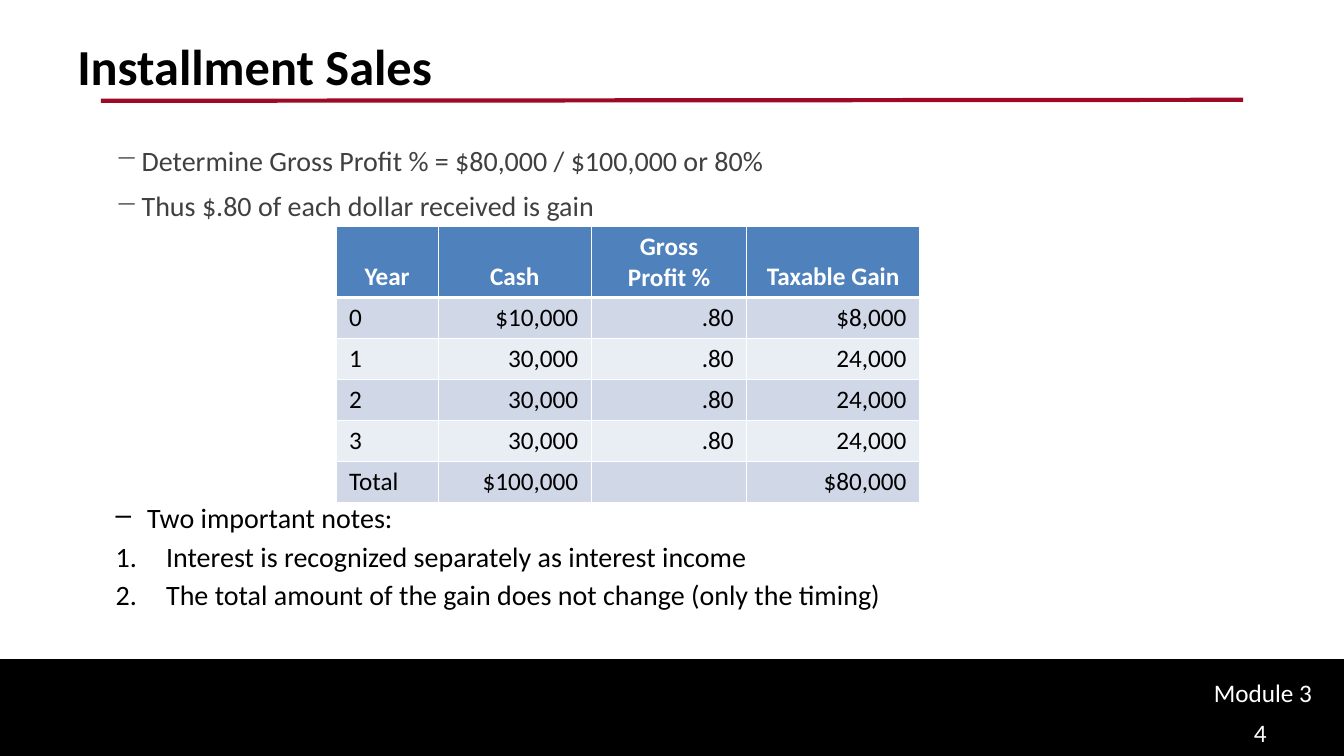
from lxml.etree import SubElement
from pptx import Presentation
from pptx.dml.color import RGBColor
from pptx.enum.shapes import MSO_CONNECTOR, MSO_SHAPE
from pptx.enum.text import MSO_ANCHOR, PP_ALIGN
from pptx.oxml.ns import qn
from pptx.util import Pt

WIDE, HIGH = 960, 540
FONT = "Calibri"
HEAD = ["Year", "Cash", "Gross\nProfit %", "Taxable Gain"]
ROWS = [
    ["0", "$10,000", ".80", "$8,000"],
    ["1", "30,000", ".80", "24,000"],
    ["2", "30,000", ".80", "24,000"],
    ["3", "30,000", ".80", "24,000"],
    ["Total", "$100,000", "", "$80,000"],
]
COLS = [73, 109.5, 111, 123.5]
STEPS = [
    "Determine Gross Profit % = $80,000 / $100,000 or 80%",
    "Thus $.80 of each dollar received is gain",
]
NOTES = [
    "Interest is recognized separately as interest income",
    "The total amount of the gain does not change (only the timing)",
]


def paint(part, hue):
    """Give a fill, line or font a solid colour."""
    if hasattr(part, "solid"):
        part.solid()
        part.fore_color.rgb = RGBColor.from_string(hue)
    else:
        part.color.rgb = RGBColor.from_string(hue)


def style(para, size, hue, bold=False):
    """Set the font of a paragraph."""
    para.font.name, para.font.size, para.font.bold = FONT, Pt(size), bold
    paint(para.font, hue)


def mark(para, left, hang, sign=None):
    """Give a paragraph a bullet sign, or a number when there is none."""
    props = para._p.get_or_add_pPr()
    props.set("marL", str(Pt(left)))
    props.set("indent", str(Pt(-hang)))
    if sign:
        SubElement(props, qn("a:buChar"), char=sign)
    else:
        SubElement(props, qn("a:buAutoNum"), type="arabicPeriod")


def label(slide, text, left, top, width, height):
    """Add a text box and return its frame."""
    box = slide.shapes.add_textbox(Pt(left), Pt(top), Pt(width), Pt(height))
    frame = box.text_frame
    frame.word_wrap = True
    frame.text = text
    return frame


def header(slide, left, top, width, height):
    """Place the title and the rule below it."""
    title = slide.shapes.title
    title.left, title.top = Pt(left), Pt(top)
    title.width, title.height = Pt(width), Pt(height)
    frame = title.text_frame
    frame.text = "Installment Sales"
    frame.vertical_anchor = MSO_ANCHOR.TOP
    para = frame.paragraphs[0]
    para.alignment = PP_ALIGN.LEFT
    style(para, 36, "000000", True)
    rule = slide.shapes.add_connector(
        MSO_CONNECTOR.STRAIGHT, Pt(left + 24), Pt(top + 50.4),
        Pt(left + width - 24), Pt(top + 49.7))
    paint(rule.line, "9E0926")
    rule.line.width = Pt(3)
    SubElement(rule._element.spPr, qn("a:effectLst"))


def steps(slide, left, top, width, height):
    """Place the dashed steps above the table."""
    frame = label(slide, "\n".join(STEPS), left, top, width, height)
    for i, para in enumerate(frame.paragraphs):
        para.line_spacing = 1.1
        para.space_before = Pt(6 if i else 0)
        mark(para, 54.5, 18.5, "−")
        style(para, 20, "404040")


def notes(slide, left, top, width, height):
    """Place the numbered notes below the table."""
    text = "\n".join(["Two important notes:"] + NOTES)
    frame = label(slide, text, left, top, width, height)
    for i, para in enumerate(frame.paragraphs):
        para.space_before = Pt(3.5 if i else 0)
        if i:
            mark(para, 72, 36)
        else:
            mark(para, 58.5, 22.5, "–")
        style(para, 20, "000000")


def border(cell, row):
    """Draw white cell edges, thick below the header."""
    props = cell._tc.get_or_add_tcPr()
    for side in "LRTB":
        thick = (row, side) in ((0, "B"), (1, "T"))
        edge = SubElement(props, qn("a:ln" + side), w=str(Pt(3 if thick else 1)))
        fill = SubElement(edge, qn("a:solidFill"))
        SubElement(fill, qn("a:srgbClr"), val="FFFFFF")


def gains(slide, left, top, height):
    """Place the table of taxable gain by year."""
    data = [HEAD] + ROWS
    tall = 50
    table = slide.shapes.add_table(
        len(data), len(COLS), Pt(left), Pt(top), Pt(sum(COLS)), Pt(height)).table
    for col, width in zip(table.columns, COLS):
        col.width = Pt(width)
    for r, (row, texts) in enumerate(zip(table.rows, data)):
        row.height = Pt((height - tall) / len(ROWS) if r else tall)
        hue = "4F81BD" if r == 0 else "D0D8E8" if r % 2 else "E9EDF4"
        for c, (cell, text) in enumerate(zip(row.cells, texts)):
            border(cell, r)
            paint(cell.fill, hue)
            cell.margin_left = cell.margin_right = Pt(9.4)
            cell.margin_top = cell.margin_bottom = Pt(3.6)
            cell.vertical_anchor = MSO_ANCHOR.TOP if r else MSO_ANCHOR.BOTTOM
            cell.text = text
            for para in cell.text_frame.paragraphs:
                if r == 0:
                    para.alignment = PP_ALIGN.CENTER
                else:
                    para.alignment = PP_ALIGN.RIGHT if c else PP_ALIGN.LEFT
                style(para, 18, "000000" if r else "FFFFFF", r == 0)


def footer(slide, left, top, width, height):
    """Place the black band with the module and page number."""
    band = slide.shapes.add_shape(
        MSO_SHAPE.RECTANGLE, Pt(left), Pt(top), Pt(width), Pt(height))
    band.shadow.inherit = False
    paint(band.fill, "000000")
    paint(band.line, "000000")
    band.line.width = Pt(2)
    right = left + width
    for text, back, down, wide in (("Module 3", 100, 8, 95), ("4", 71.5, 36.7, 65.5)):
        frame = label(slide, text, right - back, top + down, wide, 29)
        style(frame.paragraphs[0], 18, "FFFFFF")


def main():
    """Build the slide and save it."""
    deck = Presentation()
    deck.slide_width, deck.slide_height = Pt(WIDE), Pt(HIGH)
    slide = deck.slides.add_slide(deck.slide_layouts[5])
    footer(slide, 0, 472, WIDE, 68)
    header(slide, 48, 21.6, 864, 90)
    steps(slide, 39.6, 96.5, 872, 66)
    notes(slide, 39.6, 354, 872, 88)
    gains(slide, 240, 162, 196.5)
    deck.save("out.pptx")


if __name__ == "__main__":
    main()
